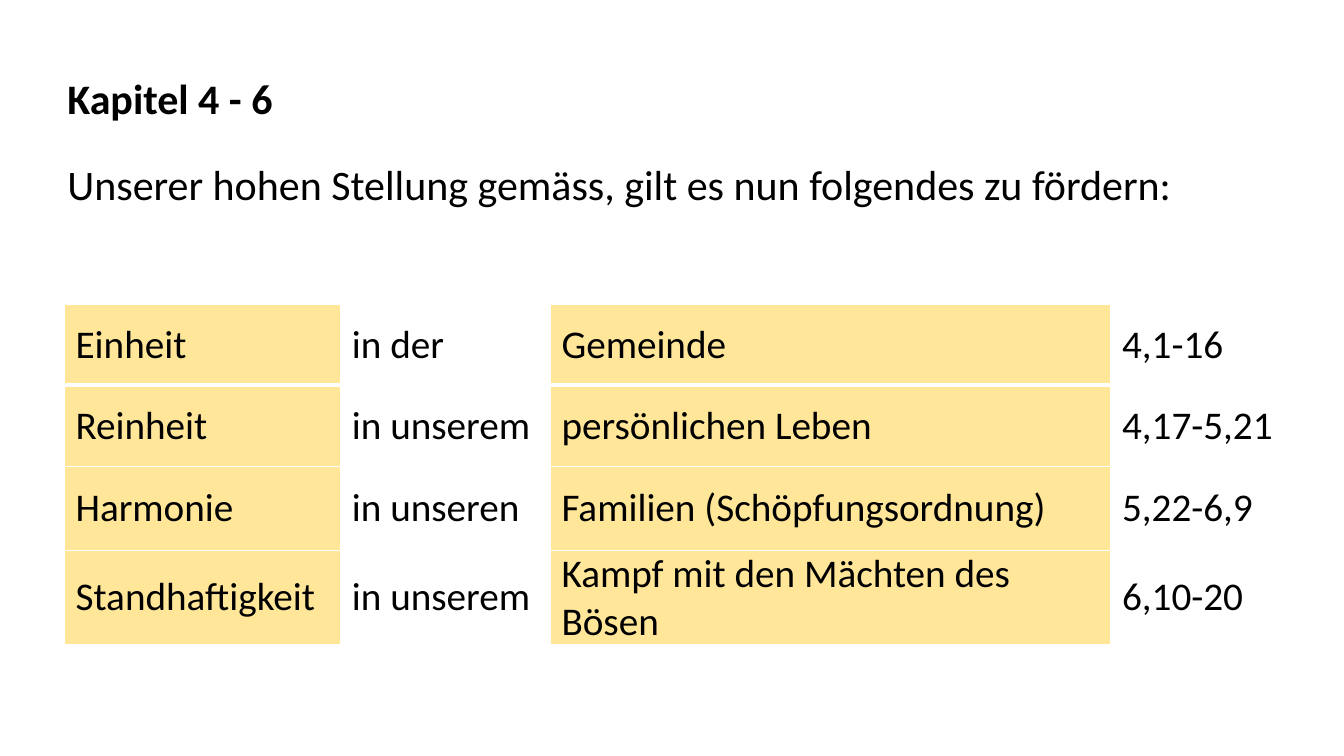
import pptx
import pptx.dml.color
import pptx.enum.text
import pptx.oxml
import pptx.oxml.ns
import pptx.util
from pptx.util import Inches

BLACK = pptx.dml.color.RGBColor(0x00, 0x00, 0x00)
WHITE = pptx.dml.color.RGBColor(0xFF, 0xFF, 0xFF)
SAND = pptx.dml.color.RGBColor(0xFF, 0xE6, 0x99)

COLUMN_WIDTHS = (2.74, 2.08, 5.56, 1.73)
ROW_HEIGHTS = (0.8, 0.81, 0.83, 0.77)
GOALS = (
    ("Einheit", "in der", "Gemeinde", "4,1-16"),
    ("Reinheit", "in unserem", "persönlichen Leben", "4,17-5,21"),
    ("Harmonie", "in unseren", "Familien (Schöpfungsordnung)", "5,22-6,9"),
    ("Standhaftigkeit", "in unserem", "Kampf mit den Mächten des Bösen", "6,10-20"),
)


def write_text(frame, text, size=30, bold=False, color=BLACK):
    span = frame.paragraphs[0].add_run()
    span.text = text
    span.font.name = "Calibri"
    span.font.size = pptx.util.Pt(size)
    span.font.bold = bold
    span.font.color.rgb = color


def add_line_of_text(page, left, top, width, height, text, **style):
    box = page.shapes.add_textbox(Inches(left), Inches(top), Inches(width), Inches(height))
    box.text_frame.word_wrap = False
    box.text_frame.auto_size = pptx.enum.text.MSO_AUTO_SIZE.SHAPE_TO_FIT_TEXT
    write_text(box.text_frame, text, **style)


def set_borders(cell, **widths):
    """Draw white borders, given in points per side; the schema wants L, R, T, B first."""
    properties = cell._tc.get_or_add_tcPr()
    for place, (side, points) in enumerate(widths.items()):
        border = pptx.oxml.parse_xml(
            f'<a:ln{side} {pptx.oxml.ns.nsdecls("a")} w="{pptx.util.Pt(points)}">'
            f'<a:solidFill><a:srgbClr val="{WHITE}"/></a:solidFill></a:ln{side}>'
        )
        properties.insert(place, border)


def add_goals_table(page, left, top):
    frame = page.shapes.add_table(
        len(GOALS), len(COLUMN_WIDTHS), Inches(left), Inches(top),
        Inches(sum(COLUMN_WIDTHS)), Inches(sum(ROW_HEIGHTS)),
    )
    table = frame.table
    for column, width in zip(table.columns, COLUMN_WIDTHS):
        column.width = Inches(width)
    for row_index, (goal, height) in enumerate(zip(GOALS, ROW_HEIGHTS)):
        table.rows[row_index].height = Inches(height)
        for column_index, text in enumerate(goal):
            cell = table.cell(row_index, column_index)
            cell.vertical_anchor = pptx.enum.text.MSO_ANCHOR.MIDDLE
            cell.margin_left = cell.margin_right = Inches(0.11)
            cell.margin_top = cell.margin_bottom = 0
            cell.fill.solid()
            cell.fill.fore_color.rgb = WHITE if column_index % 2 else SAND
            set_borders(cell, L=1, R=1, T=3 if row_index == 1 else 1,
                        B=3 if row_index == 0 else 1)
            write_text(cell.text_frame, text, size=28)


def build_chapter_slide(deck):
    page = deck.slides.add_slide(deck.slide_layouts[6])
    add_line_of_text(page, 0.57, 0.67, 2.26, 0.61, "Kapitel 4 - 6", bold=True)
    add_line_of_text(page, 0.57, 1.52, 11.49, 0.61,
                     "Unserer hohen Stellung gemäss, gilt es nun folgendes zu fördern:")
    add_goals_table(page, 0.64, 3.02)


def main():
    deck = pptx.Presentation()
    deck.slide_width = Inches(13.33)
    deck.slide_height = Inches(7.5)
    build_chapter_slide(deck)
    deck.save("out.pptx")


if __name__ == "__main__":
    main()
